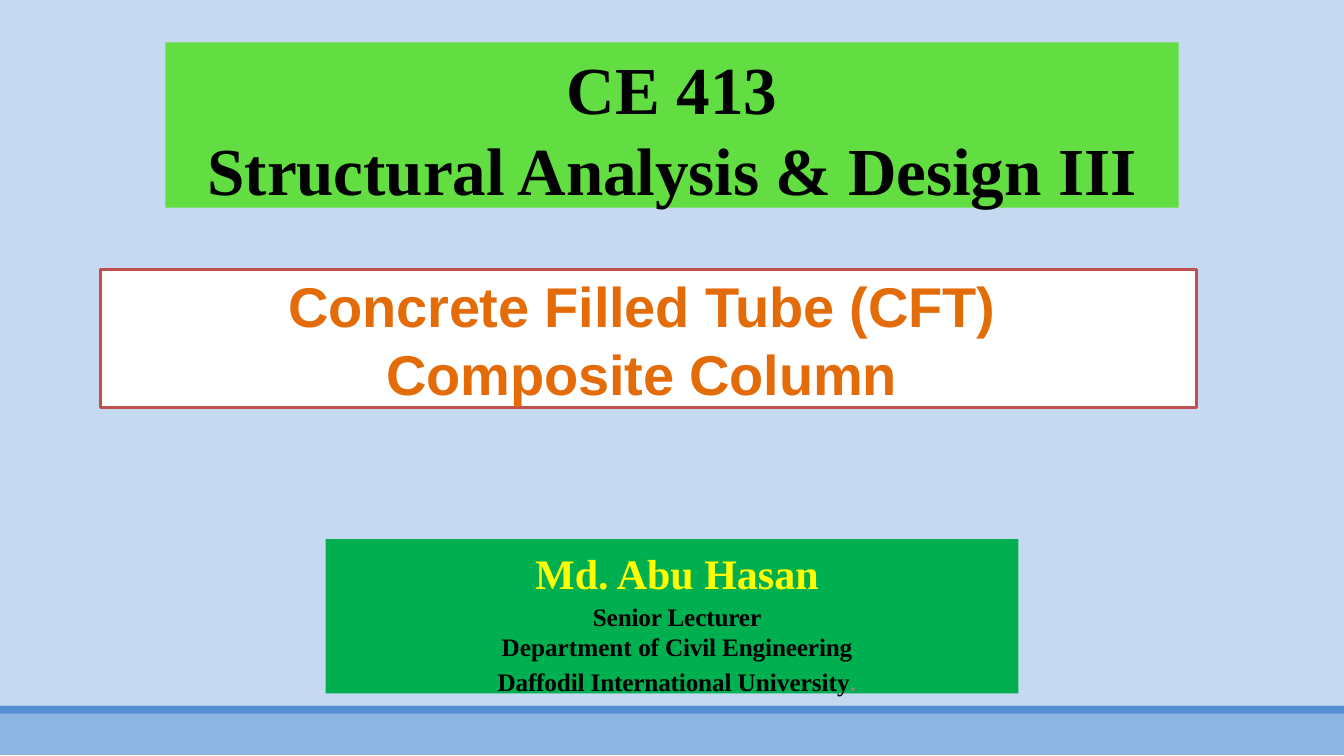
from dataclasses import dataclass

import pptx
import pptx.dml.color
import pptx.enum.shapes
import pptx.enum.text
import pptx.util

Inches = pptx.util.Inches
Pt = pptx.util.Pt
RGBColor = pptx.dml.color.RGBColor

# Colours
SKY = RGBColor(0xC5, 0xD9, 0xF0)
LIME = RGBColor(0x62, 0xDE, 0x42)
GREEN = RGBColor(0x00, 0xAF, 0x50)
BAND = RGBColor(0x8E, 0xB4, 0xE2)
STRIPE = RGBColor(0x54, 0x8E, 0xD4)
WHITE = RGBColor(0xFF, 0xFF, 0xFF)
RED = RGBColor(0xC0, 0x50, 0x4D)
ORANGE = RGBColor(0xE3, 0x6C, 0x09)
BLACK = RGBColor(0x00, 0x00, 0x00)
YELLOW = RGBColor(0xFF, 0xFF, 0x00)
GREY = RGBColor(0x88, 0x88, 0x88)

SERIF = "Times New Roman"
TIGHT = -10  # character spacing, hundredths of a point


@dataclass
class Run:
    text: str
    size: float
    color: RGBColor
    font: str = SERIF
    spacing: int = 0


@dataclass
class Line:
    runs: list[Run]
    before: float = 0


@dataclass
class Panel:
    left: float
    top: float
    width: float
    height: float
    fill: RGBColor
    border: RGBColor | None = None
    border_width: float = 0
    inset_top: float = 0
    indent: float = 0
    lines: tuple[Line, ...] = ()


PANELS = [
    # Background and footer band
    Panel(0, 0, 13.33, 7, SKY),
    Panel(0, 7.08, 13.33, 0.41, BAND, BAND, 0.75),
    Panel(0, 7, 13.33, 0.08, STRIPE),
    # Course title
    Panel(1.64, 0.42, 10.05, 1.64, LIME, inset_top=0.05, lines=(
        Line([Run("CE ", 48, BLACK),
              Run("413\vStructural Analysis & Design III", 48, BLACK, spacing=TIGHT)]),
    )),
    # Lecturer
    Panel(3.23, 5.35, 6.87, 1.53, GREEN, inset_top=0.08, indent=0.1, lines=(
        Line([Run("Md. Abu Hasan", 30, YELLOW)]),
        Line([Run("Senior Lecturer", 18, BLACK, spacing=TIGHT)], 2.6),
        Line([Run("Department ", 18, BLACK),
              Run("of Civil Engineering", 18, BLACK, spacing=TIGHT)]),
        Line([Run("Daffodil International ", 18, BLACK, spacing=TIGHT),
              Run("University", 18, BLACK),
              Run(".", 18, GREY, "Calibri")], 3.2),
    )),
    # Topic
    Panel(1, 2.67, 10.87, 1.37, WHITE, RED, 2, inset_top=0.02, indent=0.01, lines=(
        Line([Run("Concrete Filled Tube (CFT) ", 40, ORANGE, "Arial", TIGHT)]),
        Line([Run("Composite Column ", 40, ORANGE, "Arial", TIGHT)], 0.9),
    )),
]


def add_run(p, run: Run) -> None:
    """Add one run, turning vertical tabs into line breaks."""
    for i, text in enumerate(run.text.split("\v")):
        if i:
            p.add_line_break()
        r = p.add_run()
        r.text = text
        r.font.name = run.font
        r.font.size = Pt(run.size)
        r.font.bold = True
        r.font.color.rgb = run.color
        if run.spacing:
            r.font._element.set("spc", str(run.spacing))


def add_panel(slide: pptx.slide.Slide, panel: Panel) -> None:
    sp = slide.shapes.add_shape(
        pptx.enum.shapes.MSO_SHAPE.RECTANGLE, Inches(panel.left), Inches(panel.top),
        Inches(panel.width), Inches(panel.height))
    sp.shadow.inherit = False
    sp.fill.solid()
    sp.fill.fore_color.rgb = panel.fill
    if panel.border is None:
        sp.line.fill.background()
    else:
        sp.line.color.rgb = panel.border
        sp.line.width = Pt(panel.border_width)

    tf = sp.text_frame
    tf.word_wrap = True
    tf.vertical_anchor = pptx.enum.text.MSO_ANCHOR.TOP
    tf.margin_left = tf.margin_right = tf.margin_bottom = 0
    tf.margin_top = Inches(panel.inset_top)
    for i, line in enumerate(panel.lines):
        p = tf.add_paragraph() if i else tf.paragraphs[0]
        p.alignment = pptx.enum.text.PP_ALIGN.CENTER
        if panel.indent:
            p._p.get_or_add_pPr().set("marL", str(Inches(panel.indent)))
        if line.before:
            p.space_before = Pt(line.before)
        for run in line.runs:
            add_run(p, run)


def main() -> None:
    prs = pptx.Presentation()
    prs.slide_width, prs.slide_height = Inches(13.33), Inches(7.5)
    slide = prs.slides.add_slide(prs.slide_layouts[6])
    for panel in PANELS:
        add_panel(slide, panel)
    prs.save("out.pptx")


if __name__ == "__main__":
    main()
